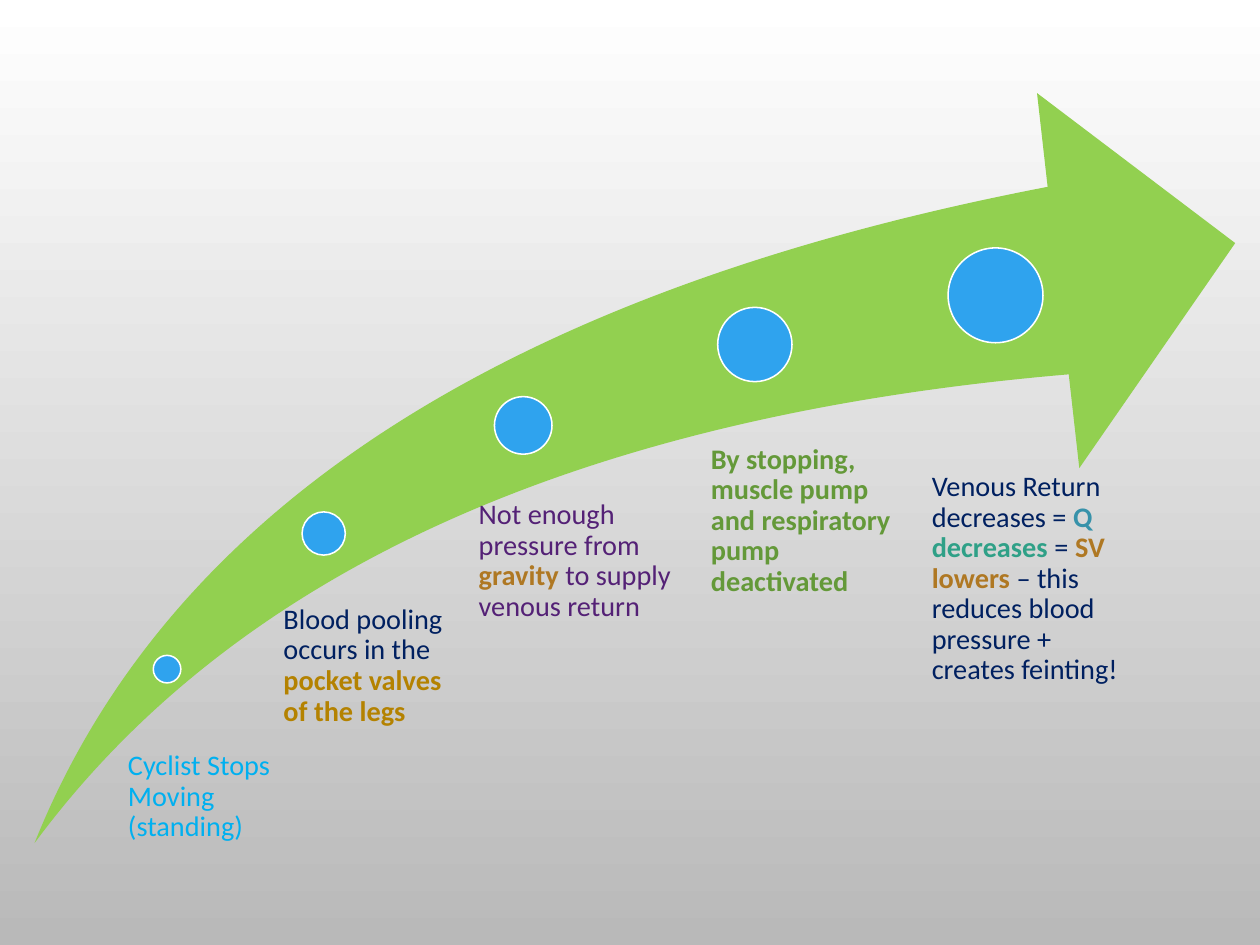
"""Build a slide that follows a stopped cyclist's venous return along a rising arrow."""
from dataclasses import dataclass

from pptx import Presentation
from pptx.dml.color import RGBColor
from pptx.enum.shapes import MSO_SHAPE
from pptx.enum.text import MSO_ANCHOR, PP_ALIGN
from pptx.util import Cm, Pt

SWOOSH = MSO_SHAPE.SWOOSH_ARROW
OVAL = MSO_SHAPE.OVAL
TOP = MSO_ANCHOR.TOP
LEFT = PP_ALIGN.LEFT
BLANK_LAYOUT = 6
INSET_PER_DIAMETER = 0.53


@dataclass(frozen=True)
class Theme:
    """Hold the colours and type of the slide."""
    font: str = "Calibri"
    label_size: float = 23
    outline_width: float = 1.25
    white: str = "FFFFFF"
    grey: str = "B9B9B9"
    arrow: str = "92D050"
    dot: str = "2FA3EE"
    sky: str = "00B0F0"
    navy: str = "002060"
    gold: str = "B48200"
    purple: str = "542176"
    ochre: str = "AF7823"
    green: str = "649939"
    teal: str = "3792AA"
    jade: str = "2FA087"


@dataclass(frozen=True)
class Stage:
    """Describe a dot (centre x, centre y, diameter), its label box and text, in cm."""
    dot: tuple
    box: tuple
    runs: tuple


THEME = Theme()

STAGES = (
    Stage((4.79, 19.19, 0.79), (3.25, 21.54, 4.52, 3.28),
          (("Cyclist Stops Moving (standing)", THEME.sky, False),)),
    Stage((9.28, 15.3, 1.24), (7.47, 17.35, 5.72, 6.32),
          (("Blood pooling occurs in the ", THEME.navy, False),
           ("pocket valves of the legs", THEME.gold, True))),
    Stage((15, 12.2, 1.65), (12.85, 14.35, 6.65, 8.2),
          (("Not enough pressure from ", THEME.purple, False),
           ("gravity", THEME.ochre, True),
           (" to supply venous return", THEME.purple, False))),
    Stage((21.64, 9.88, 2.13), (19.25, 12.75, 6.88, 6.43),
          (("By stopping, muscle pump and respiratory pump deactivated",
            THEME.green, True),)),
    Stage((28.54, 8.47, 2.72), (25.27, 13.54, 6.88, 10.31),
          (("Venous Return decreases = ", THEME.navy, False),
           ("Q ", THEME.teal, True),
           ("decreases ", THEME.jade, True),
           ("= ", THEME.navy, False),
           ("SV lowers ", THEME.ochre, True),
           ("– this reduces blood pressure + creates feinting!", THEME.navy, False))),
)


def rgb(value):
    """Turn a hex string into a colour."""
    return RGBColor.from_string(value)


def paint_background(slide):
    """Fill the slide with a vertical gradient."""
    fill = slide.background.fill
    fill.gradient()
    fill.gradient_angle = 270
    for stop, color in zip(fill.gradient_stops, (THEME.white, THEME.grey)):
        stop.color.rgb = rgb(color)


def add_filled_shape(slide, kind, box, color):
    """Add a flat preset shape without outline."""
    shape = slide.shapes.add_shape(kind, *map(Cm, box))
    shape.shadow.inherit = False
    shape.fill.solid()
    shape.fill.fore_color.rgb = rgb(color)
    shape.line.fill.background()
    return shape


def add_arrow(slide):
    """Add the rising arrow behind the stages."""
    arrow = add_filled_shape(slide, SWOOSH, (0.99, 2.67, 34.42, 21.51), THEME.arrow)
    arrow.adjustments[0] = 0.25
    arrow.adjustments[1] = 0.25


def add_dot(slide, center_x, center_y, diameter):
    """Add a white-rimmed dot around a centre."""
    radius = diameter / 2
    box = (center_x - radius, center_y - radius, diameter, diameter)
    dot = add_filled_shape(slide, OVAL, box, THEME.dot)
    dot.line.color.rgb = rgb(THEME.white)
    dot.line.width = Pt(THEME.outline_width)


def add_label(slide, box, inset, runs):
    """Add a wrapped label whose runs have their own colour and weight."""
    frame = slide.shapes.add_textbox(*map(Cm, box)).text_frame
    frame.word_wrap = True
    frame.vertical_anchor = TOP
    frame.margin_left = Cm(inset)
    frame.margin_top = frame.margin_right = frame.margin_bottom = 0
    paragraph = frame.paragraphs[0]
    paragraph.alignment = LEFT
    paragraph.line_spacing = 0.9
    paragraph.font.name = THEME.font
    paragraph.font.size = Pt(THEME.label_size)
    for text, color, bold in runs:
        run = paragraph.add_run()
        run.text = text
        run.font.color.rgb = rgb(color)
        run.font.bold = bold


def main():
    """Build and save the presentation."""
    presentation = Presentation()
    presentation.slide_width = Cm(36.12)
    presentation.slide_height = Cm(27.1)
    slide = presentation.slides.add_slide(presentation.slide_layouts[BLANK_LAYOUT])
    paint_background(slide)
    add_arrow(slide)
    for stage in STAGES:
        add_dot(slide, *stage.dot)
        diameter = stage.dot[2]
        add_label(slide, stage.box, diameter * INSET_PER_DIAMETER, stage.runs)
    presentation.save("out.pptx")


if __name__ == "__main__":
    main()
